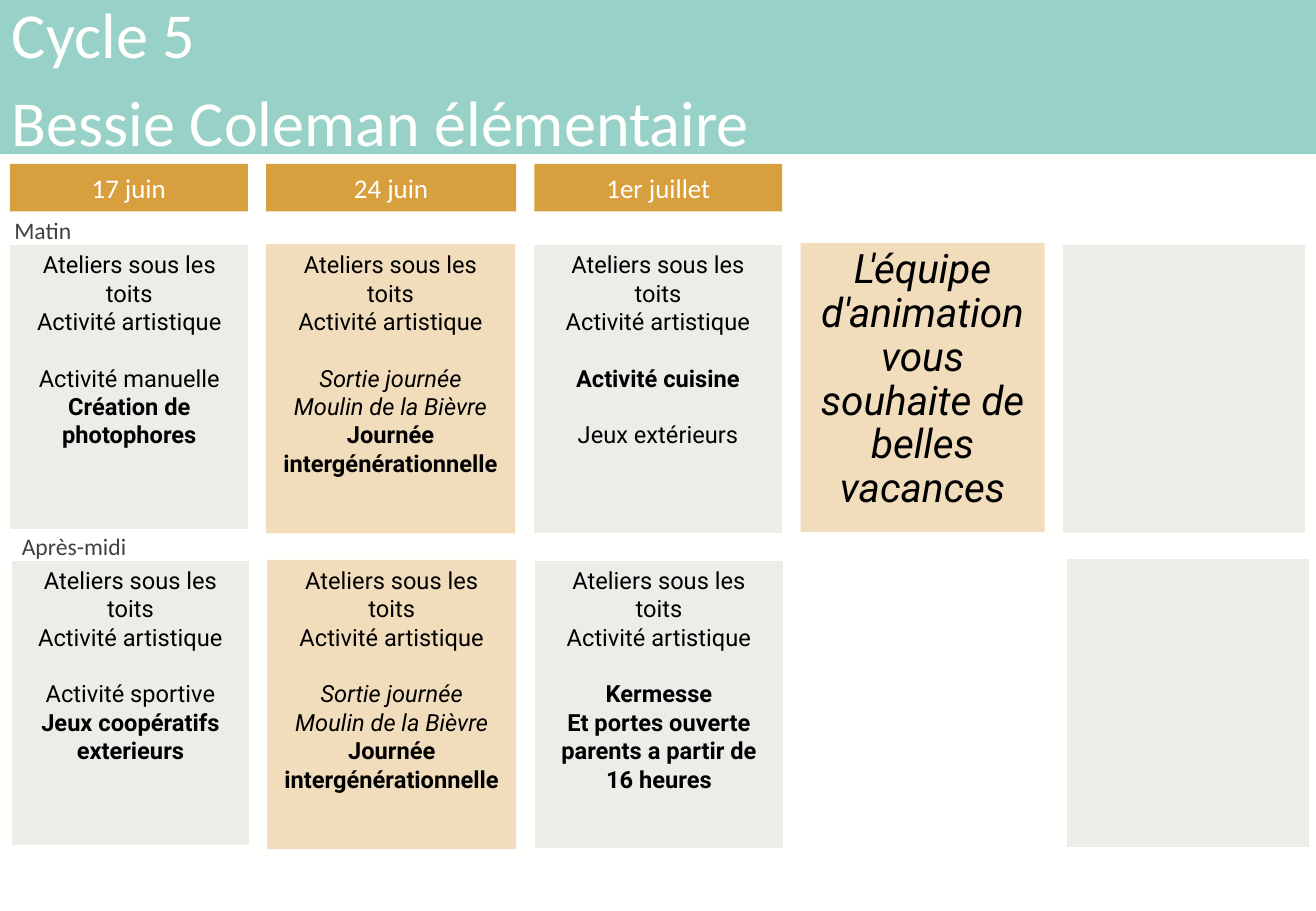
"""Build the Cycle 5 activity programme slide for Bessie Coleman élémentaire."""
from lxml import etree
from pptx import Presentation
from pptx.dml.color import RGBColor
from pptx.enum.shapes import MSO_SHAPE as SHAPE
from pptx.enum.text import MSO_ANCHOR as ANCHOR, PP_ALIGN as ALIGN
from pptx.oxml.ns import qn
from pptx.util import Pt

WHITE, GREY, GOLD, TEAL = "FFFFFE", "EEECE8", "D89F3F", "98D1C8"
BLACK, DARK = "000000", "404040"


def paint(fill, color, alpha=100):
    fill.solid()
    fill.fore_color.rgb = RGBColor.from_string(color)
    if alpha < 100:
        clr = fill._xPr.find(".//" + qn("a:srgbClr"))
        etree.SubElement(clr, qn("a:alpha")).set("val", str(alpha * 1000))


def write(sp, lines, font, size, color, align=ALIGN.CENTER, anchor=ANCHOR.TOP):
    tf = sp.text_frame
    tf.word_wrap = True
    tf.vertical_anchor = anchor
    for i, (text, style, gap) in enumerate(lines):
        p = tf.paragraphs[0] if i == 0 else tf.add_paragraph()
        p.alignment = align
        p.space_before = Pt(gap)
        r = p.add_run()
        r.text = text
        r.font.name, r.font.size = font, Pt(size)
        r.font.bold, r.font.italic = style == "b", style == "i"
        paint(r.font.fill, color)


prs = Presentation()
prs.slide_width, prs.slide_height = Pt(780), Pt(540)
s = prs.slides.add_slide(prs.slide_layouts[6])
paint(s.background.fill, WHITE)

GAP = 16.8
workshop = [("Ateliers sous les toits", "", 0), ("Activité artistique", "", 0)]
outing = workshop + [
    ("Sortie journée", "i", GAP),
    ("Moulin de la Bièvre", "i", 0),
    ("Journée intergénérationnelle", "b", 0),
]
crafts = workshop + [
    ("Activité manuelle", "", GAP),
    ("Création de photophores", "b", 0),
]
cooking = workshop + [
    ("Activité cuisine", "b", GAP),
    ("Jeux extérieurs", "", GAP),
]
sport = workshop + [
    ("Activité sportive", "", GAP),
    ("Jeux coopératifs exterieurs", "b", 0),
]
fair = workshop + [
    ("Kermesse", "b", GAP),
    ("Et portes ouverte parents a partir de 16 heures", "b", 0),
]
wishes = [("L'équipe d'animation vous souhaite de belles vacances", "i", 0)]

MORNING, AFTERNOON = 144.7, 331.9
panels = [
    (5.8, MORNING, 141.8, 169.2, GREY, crafts, 14),
    (157.7, MORNING, 147.6, 171.4, GOLD, outing, 14),
    (316.2, MORNING, 147.6, 171.4, GREY, cooking, 14),
    (474.5, 144, 144.7, 171.4, GOLD, wishes, 24),
    (630, MORNING, 144, 171.4, GREY, [], 14),
    (6.5, AFTERNOON, 141.8, 169.2, GREY, sport, 14),
    (158.4, AFTERNOON, 147.6, 171.4, GOLD, outing, 14),
    (316.8, AFTERNOON, 147.6, 171.4, GREY, fair, 14),
    (632.2, 331.2, 144, 171.4, GREY, [], 14),
]
for x, y, w, h, color, lines, size in panels:
    sp = s.shapes.add_shape(SHAPE.RECTANGLE, Pt(x), Pt(y), Pt(w), Pt(h))
    sp.shadow.inherit = False
    if color == GOLD:
        paint(sp.fill, GOLD, 35)
        sp.line.fill.background()
    else:
        paint(sp.fill, GREY)
        paint(sp.line.fill, WHITE)
        sp.line.width = Pt(0.75)
    write(sp, lines, "Roboto", size, BLACK)
    if lines is wishes:
        sp.text_frame.paragraphs[0].line_spacing = 0.9

title = [("Cycle 5", "", 0), ("Bessie Coleman élémentaire", "", 6.3)]
bands = [
    (0, 0, 780, 91.4, TEAL, title, 38, ALIGN.LEFT),
    (5.8, 97.2, 141.1, 28.1, GOLD, [("17 juin", "", 0)], 16, ALIGN.CENTER),
    (157.7, 97.2, 148.3, 28.1, GOLD, [("24 juin", "", 0)], 16, ALIGN.CENTER),
    (316.8, 97.2, 146.9, 28.1, GOLD, [("1er juillet", "", 0)], 16, ALIGN.CENTER),
]
for x, y, w, h, color, lines, size, align in bands:
    sp = s.shapes.add_shape(SHAPE.RECTANGLE, Pt(x), Pt(y), Pt(w), Pt(h))
    sp.shadow.inherit = False
    paint(sp.fill, color)
    sp.line.fill.background()
    write(sp, lines, "Calibri", size, WHITE, align, ANCHOR.MIDDLE)

labels = [
    ("Matin", 1.4, 124.6, 57.6, ALIGN.LEFT),
    ("Après-midi", -10.8, 311.8, 109.4, ALIGN.CENTER),
]
for text, x, y, w, align in labels:
    sp = s.shapes.add_textbox(Pt(x), Pt(y), Pt(w), Pt(24.5))
    write(sp, [(text, "", 0)], "Calibri", 14, DARK, align)

prs.save("out.pptx")
